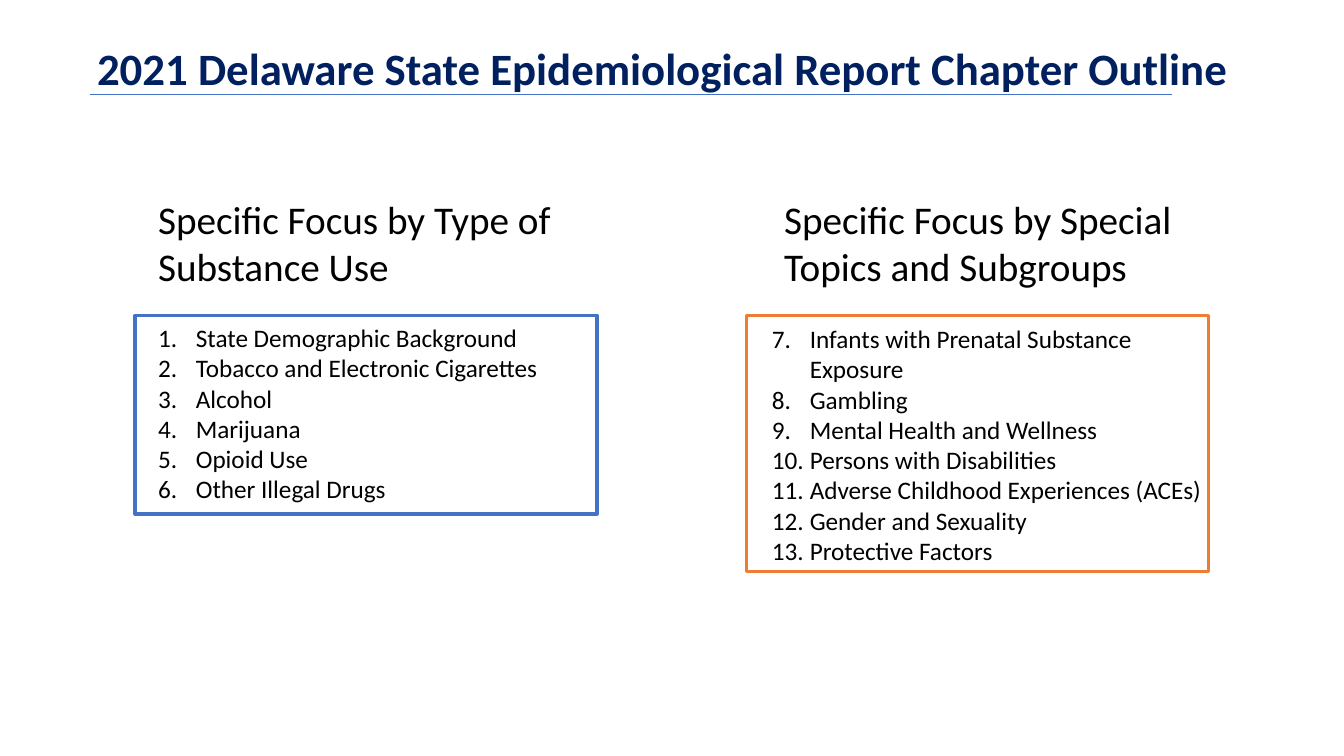
import pptx
import pptx.dml.color
import pptx.enum.shapes
import pptx.enum.text
import pptx.oxml.ns
import pptx.util
from lxml import etree

Pt = pptx.util.Pt
RGBColor = pptx.dml.color.RGBColor

NAVY = RGBColor(0x00, 0x20, 0x60)
BLUE = RGBColor(0x44, 0x72, 0xC4)
ORANGE = RGBColor(0xED, 0x7D, 0x31)
BLACK = RGBColor(0x00, 0x00, 0x00)

TITLE = "2021 Delaware State Epidemiological Report Chapter Outline"
# Places are left, top, width, height in points.
COLUMNS = [
    {
        "heading": "Specific Focus by Type of Substance Use",
        "heading_place": (105.8, 136, 337, 75),
        "frame_place": (96.5, 225.4, 330, 141.8),
        "list_place": (105.8, 226.8, 337, 181.4),
        "color": BLUE,
        "first_number": 1,
        "chapters": [
            "State Demographic Background",
            "Tobacco and Electronic Cigarettes",
            "Alcohol",
            "Marijuana",
            "Opioid Use",
            "Other Illegal Drugs",
        ],
    },
    {
        "heading": "Specific Focus by Special Topics and Subgroups",
        "heading_place": (553, 136, 330.5, 75),
        "frame_place": (533.5, 225.4, 330, 182.9),
        "list_place": (544.3, 227.5, 339.1, 203.8),
        "color": ORANGE,
        "first_number": 7,
        "chapters": [
            "Infants with Prenatal Substance Exposure",
            "Gambling",
            "Mental Health and Wellness",
            "Persons with Disabilities",
            "Adverse Childhood Experiences (ACEs)",
            "Gender and Sexuality",
            "Protective Factors",
        ],
    },
]
NUMBER_INDENT = Pt(27)


def number_paragraph(para, first_number):
    """Give a paragraph a hanging automatic number."""
    properties = para._p.get_or_add_pPr()
    properties.set("marL", str(NUMBER_INDENT))
    properties.set("indent", str(-NUMBER_INDENT))
    numbering = etree.SubElement(properties, pptx.oxml.ns.qn("a:buAutoNum"))
    numbering.set("type", "arabicPeriod")
    if first_number > 1:
        numbering.set("startAt", str(first_number))


def add_text(page, lines, place, size, color=BLACK, bold=False,
             align=pptx.enum.text.PP_ALIGN.LEFT, first_number=None):
    box = page.shapes.add_textbox(*map(Pt, place))
    frame = box.text_frame
    frame.word_wrap = True
    for index, line in enumerate(lines):
        para = frame.add_paragraph() if index else frame.paragraphs[0]
        para.alignment = align
        if first_number is not None:
            number_paragraph(para, first_number)
        span = para.add_run()
        span.text = line
        span.font.name = "Calibri"
        span.font.size = Pt(size)
        span.font.bold = bold
        span.font.color.rgb = color


def add_frame(page, place, color):
    frame = page.shapes.add_shape(
        pptx.enum.shapes.MSO_SHAPE.RECTANGLE, *map(Pt, place))
    frame.shadow.inherit = False
    frame.fill.background()
    frame.line.color.rgb = color
    frame.line.width = Pt(2.25)


def add_rule(page, left, right, top):
    rule = page.shapes.add_connector(
        pptx.enum.shapes.MSO_CONNECTOR.STRAIGHT,
        Pt(left), Pt(top), Pt(right), Pt(top))
    rule.line.color.rgb = BLUE
    rule.line.width = Pt(0.5)
    etree.SubElement(rule._element.spPr, pptx.oxml.ns.qn("a:effectLst"))


def main():
    deck = pptx.Presentation()
    deck.slide_width, deck.slide_height = Pt(960), Pt(540)
    page = deck.slides.add_slide(deck.slide_layouts[6])

    add_text(page, [TITLE], (54, 25.2, 838.8, 46), 32, color=NAVY, bold=True,
             align=pptx.enum.text.PP_ALIGN.CENTER)
    add_rule(page, 64, 837.4, 67.7)
    for column in COLUMNS:
        add_frame(page, column["frame_place"], column["color"])
        add_text(page, [column["heading"]], column["heading_place"], 28)
        add_text(page, column["chapters"], column["list_place"], 18,
                 first_number=column["first_number"])

    deck.save("out.pptx")


if __name__ == "__main__":
    main()
